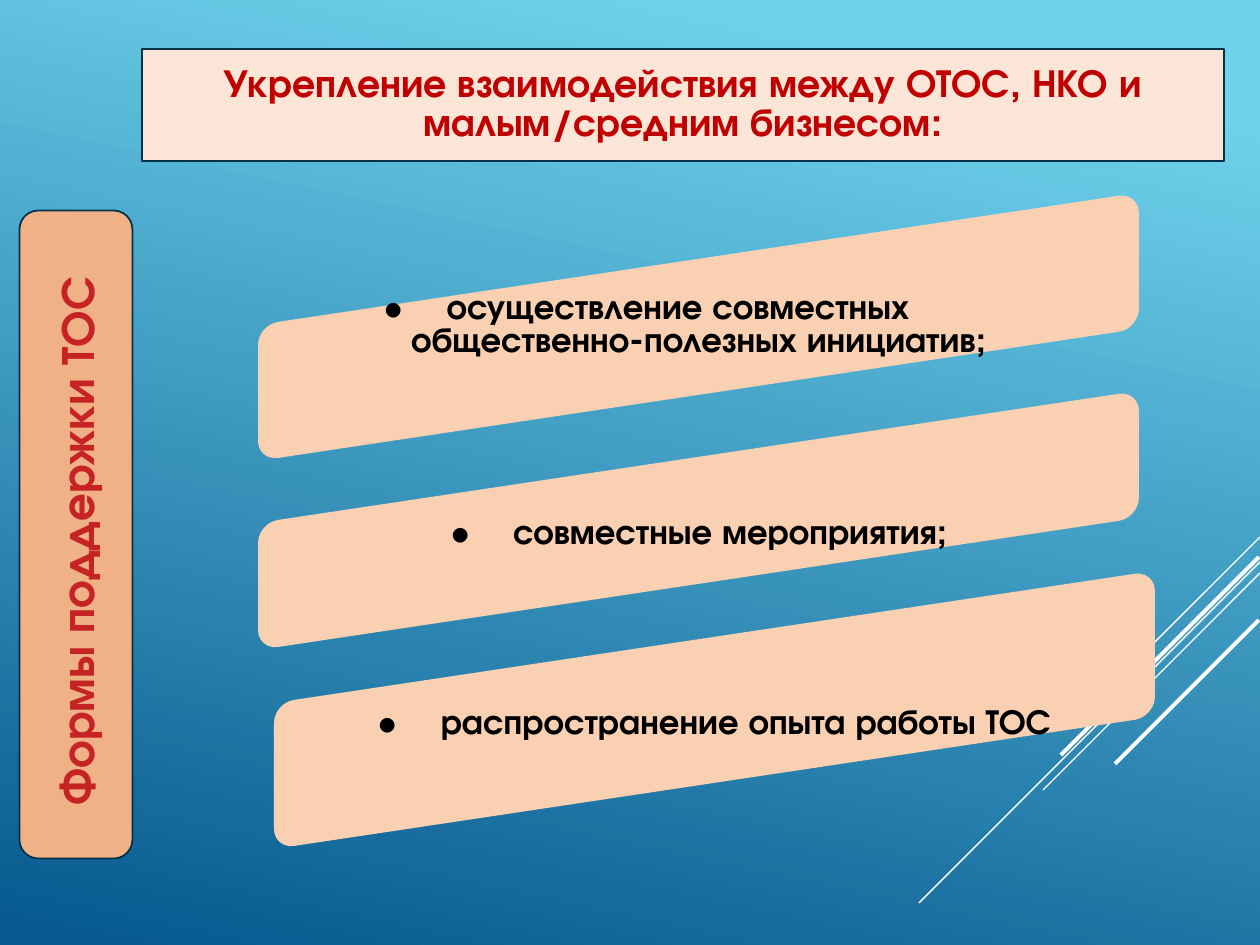
from math import cos, radians, sin

from lxml import etree
from pptx import Presentation
from pptx.dml.color import RGBColor
from pptx.enum.shapes import MSO_CONNECTOR, MSO_SHAPE
from pptx.enum.text import MSO_ANCHOR, MSO_AUTO_SIZE, PP_ALIGN
from pptx.oxml.ns import qn
from pptx.util import Pt

STRAIGHT = MSO_CONNECTOR.STRAIGHT
ROUNDED = MSO_SHAPE.ROUNDED_RECTANGLE
MIDDLE = MSO_ANCHOR.MIDDLE
CENTER = PP_ALIGN.CENTER
NO_FIT = MSO_AUTO_SIZE.NONE

PX = 914400 // 126  # EMU in one px


class Theme:
    font = "TeX Gyre Adventor"
    sky, deep = "6ED2EB", "06588E"
    white, outline = "FFFFFF", "043148"
    title_fill, title_text, title_size = "FAE5D7", "C00000", 22.5
    side_fill, side_text, side_size = "F1B187", "C62324", 27
    bar_fill, bar_text, bar_size = "FAD0B2", "000000", 20


def paint(s, fill, line=None):
    s.fill.solid()
    s.fill.fore_color.rgb = RGBColor.from_string(fill)
    if line:
        s.line.color.rgb = RGBColor.from_string(line)
        s.line.width = Pt(1)
    else:
        s.line.fill.background()


def write(s, text, size, color, spacing=1.0):
    tf = s.text_frame
    tf.text = text
    tf.word_wrap = True
    tf.auto_size = NO_FIT
    tf.vertical_anchor = MIDDLE
    p = tf.paragraphs[0]
    p.alignment = CENTER
    p.line_spacing = spacing
    for r in p.runs:
        r.font.name = Theme.font
        r.font.size = Pt(size)
        r.font.bold = True
        r.font.color.rgb = RGBColor.from_string(color)


prs = Presentation()
prs.slide_width, prs.slide_height = 1260 * PX, 945 * PX
slide = prs.slides.add_slide(prs.slide_layouts[5])
shapes = slide.shapes

# Background gradient
bg = slide.background.fill
bg.gradient()
bg.gradient_angle = 258
for stop, color, position in zip(bg.gradient_stops, (Theme.sky, Theme.deep), (0.1, 1)):
    stop.color.rgb = RGBColor.from_string(color)
    stop.position = position

# Diagonal lines: right end, then the 45-degree run to the lower left
for x, y, run, width in [
    (1260, 537, 105, 0.75),
    (1260, 562, 341, 0.75),
    (1260, 573, 217, 0.75),
    (1259, 557, 198, 2.25),
    (1259, 620, 144, 2.25),
]:
    line = shapes.add_connector(
        STRAIGHT, x * PX, y * PX, (x - run) * PX, (y + run) * PX
    )
    line.line.color.rgb = RGBColor.from_string(Theme.white)
    line.line.width = Pt(width)
    etree.SubElement(line._element.spPr, qn("a:effectLst"))

# Title in a rounded frame
title = shapes.title
title.left, title.top, title.width, title.height = (
    v * PX for v in (142, 49, 1082, 112)
)
geometry = etree.SubElement(title._element.spPr, qn("a:prstGeom"), prst="roundRect")
etree.SubElement(geometry, qn("a:avLst"))
paint(title, Theme.title_fill, Theme.outline)
write(
    title,
    "Укрепление взаимодействия между ОТОС, НКО и малым/средним бизнесом:",
    Theme.title_size,
    Theme.title_text,
    Pt(22.5),
)

# Vertical side label
side = shapes.add_shape(ROUNDED, -248 * PX, 478 * PX, 648 * PX, 113 * PX)
side.rotation = 270
side.shadow.inherit = False
paint(side, Theme.side_fill, Theme.outline)
write(side, "Формы поддержки ТОС ", Theme.side_size, Theme.side_text)

# Slanted bars: rounded rectangles sheared upwards to the right
BAR_WIDTH, RADIUS, SLOPE = 881, 20, 0.15
for left, top, height, text, spacing in [
    (258, 325, 136,
     "•\tосуществление совместных \t\tобщественно-полезных инициатив;", Pt(18.8)),
    (258, 523, 127, "•\tсовместные мероприятия;", 1.5),
    (274, 703, 146, "•\tраспространение опыта работы ТОС", 1.5),
]:
    near_x, far_x = RADIUS, BAR_WIDTH - RADIUS
    near_y, far_y = RADIUS, height - RADIUS
    corners = [(near_x, near_y, 180), (far_x, near_y, 270),
               (far_x, far_y, 0), (near_x, far_y, 90)]
    points = []
    for cx, cy, start in corners:
        for angle in range(start, start + 91, 15):
            x = cx + RADIUS * cos(radians(angle))
            y = cy + RADIUS * sin(radians(angle))
            points.append((round((left + x) * PX), round((top + y - SLOPE * x) * PX)))
    outline = shapes.build_freeform(*points[0])
    outline.add_line_segments(points[1:], close=True)
    bar = outline.convert_to_shape()
    bar.shadow.inherit = False
    paint(bar, Theme.bar_fill)
    write(bar, text, Theme.bar_size, Theme.bar_text, spacing)

prs.save("out.pptx")
